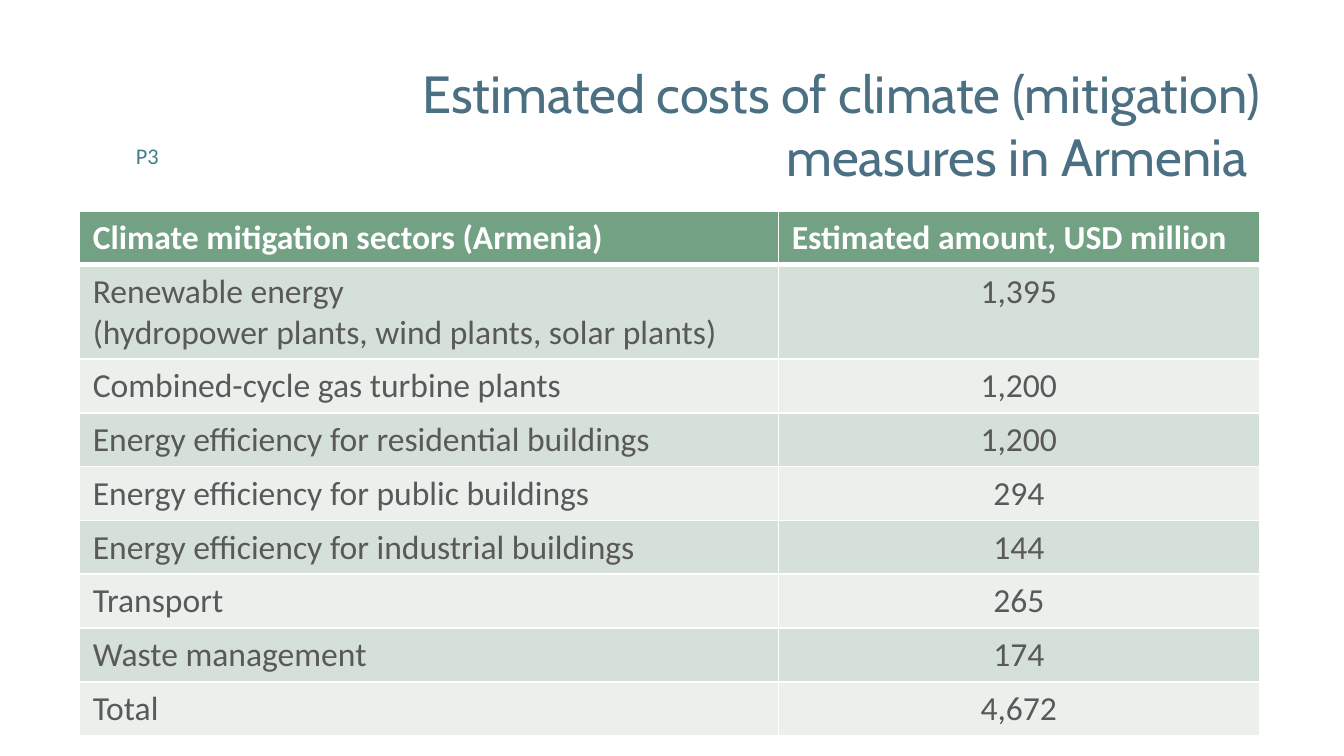
from pptx import Presentation
from pptx.dml.color import RGBColor
from pptx.enum.shapes import MSO_CONNECTOR
from pptx.enum.text import MSO_ANCHOR, PP_ALIGN
from pptx.oxml.ns import qn
from pptx.util import Cm, Pt
from lxml import etree

STRAIGHT = MSO_CONNECTOR.STRAIGHT
TOP, BOTTOM = MSO_ANCHOR.TOP, MSO_ANCHOR.BOTTOM
LEFT, CENTER, RIGHT = PP_ALIGN.LEFT, PP_ALIGN.CENTER, PP_ALIGN.RIGHT

WHITE = RGBColor(0xFF, 0xFF, 0xFF)
BLUE = RGBColor(0x4B, 0x70, 0x83)
TEAL = RGBColor(0x42, 0x7E, 0x8E)
GRAY = RGBColor(0x59, 0x59, 0x59)
GREEN = RGBColor(0x73, 0xA1, 0x84)
BANDS = (RGBColor(0xD5, 0xE0, 0xD9), RGBColor(0xEB, 0xF0, 0xED))

TABLE_LEFT, TABLE_TOP = Cm(1.5), Cm(3.99)
COLUMN_WIDTHS = (Cm(13.21), Cm(9.09))
ROW_HEIGHT = Cm(0.97)

HEADER = ("Climate mitigation sectors (Armenia)", "Estimated amount, USD million")
COSTS = (
    ("Renewable energy\n(hydropower plants, wind plants, solar plants)", "1,395"),
    ("Combined-cycle gas turbine plants", "1,200"),
    ("Energy efficiency for residential buildings", "1,200"),
    ("Energy efficiency for public buildings", "294"),
    ("Energy efficiency for industrial buildings", "144"),
    ("Transport", "265"),
    ("Waste management", "174"),
    ("Total", "4,672"),
)


def style_paragraphs(tf, font, size, color, align, bold=False):
    for p in tf.paragraphs:
        p.alignment = align
        p.font.name = font
        p.font.size = Pt(size)
        p.font.color.rgb = color
        p.font.bold = bold


def add_text(slide, text, box, font, size, color, anchor):
    """Add a right-aligned text box without insets."""
    tf = slide.shapes.add_textbox(*box).text_frame
    tf.word_wrap = True
    tf.margin_left = tf.margin_right = tf.margin_top = tf.margin_bottom = 0
    tf.vertical_anchor = anchor
    tf.text = text
    style_paragraphs(tf, font, size, color, RIGHT)


def add_rule(slide, left, top, width):
    line = slide.shapes.add_connector(STRAIGHT, left, top, left + width, top)
    line.line.color.rgb = BLUE
    line.line.width = Pt(1)
    etree.SubElement(line._element.spPr, qn("a:effectLst"))


def set_borders(cell, **widths):
    """Draw white borders; widths are points for sides L, R, T and B."""
    tc_pr = cell._tc.get_or_add_tcPr()
    for side, width in widths.items():
        ln = etree.SubElement(tc_pr, qn(f"a:ln{side}"), w=str(Pt(width)))
        fill = etree.SubElement(ln, qn("a:solidFill"))
        etree.SubElement(fill, qn("a:srgbClr"), val=str(WHITE))


def add_cost_table(slide):
    rows = (HEADER, *COSTS)
    table = slide.shapes.add_table(
        len(rows), len(HEADER), TABLE_LEFT, TABLE_TOP,
        sum(COLUMN_WIDTHS), ROW_HEIGHT * len(rows)).table
    for column, width in zip(table.columns, COLUMN_WIDTHS):
        column.width = width
    for i, row in enumerate(rows):
        table.rows[i].height = ROW_HEIGHT
        is_header = i == 0
        for j, text in enumerate(row):
            cell = table.cell(i, j)
            cell.text = text
            set_borders(cell, L=1, R=1, T=3 if i == 1 else 1, B=3 if is_header else 1)
            cell.fill.solid()
            cell.fill.fore_color.rgb = GREEN if is_header else BANDS[(i - 1) % 2]
            style_paragraphs(cell.text_frame, "Calibri", 18,
                             WHITE if is_header else GRAY,
                             CENTER if j and not is_header else LEFT, is_header)


def main():
    prs = Presentation()
    prs.slide_width, prs.slide_height = Cm(25.4), Cm(14.29)
    slide = prs.slides.add_slide(prs.slide_layouts[6])
    add_rule(slide, TABLE_LEFT, TABLE_TOP, sum(COLUMN_WIDTHS))
    add_text(slide, "P3", (Cm(1.75), Cm(2.69), Cm(1.25), Cm(0.56)),
             "Calibri", 12, TEAL, TOP)
    add_text(slide, "Estimated costs of climate (mitigation) measures in Armenia ",
             (Cm(4.27), Cm(1.14), Cm(19.53), Cm(2.39)), "Cabin", 28, BLUE, BOTTOM)
    add_cost_table(slide)
    prs.save("out.pptx")


if __name__ == "__main__":
    main()
